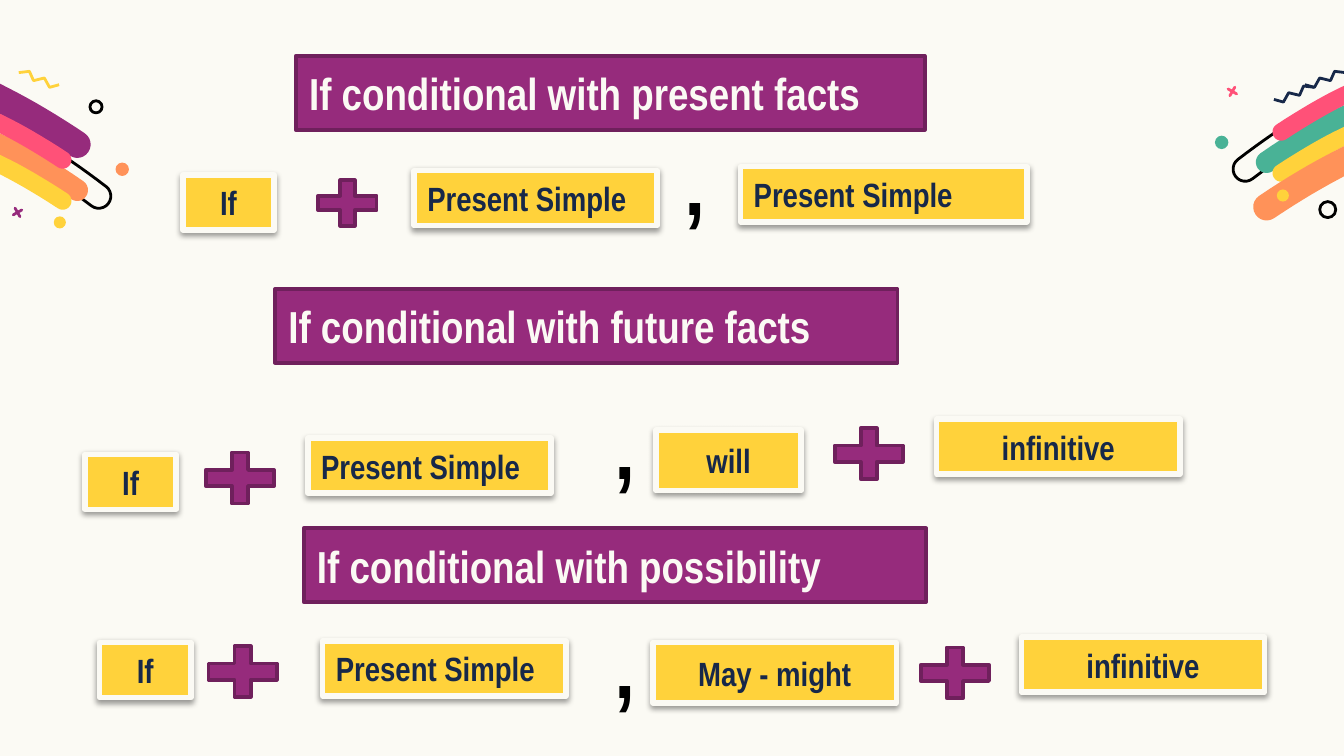
import math
from typing import NamedTuple

from lxml import etree
from pptx import Presentation
from pptx.dml.color import RGBColor
from pptx.enum import shapes, text
from pptx.oxml import ns
from pptx.util import Pt

PURPLE = RGBColor(0x96, 0x2B, 0x7C)
DARK_PURPLE = RGBColor(0x6F, 0x20, 0x5C)
YELLOW = RGBColor(0xFF, 0xD2, 0x3B)
ORANGE = RGBColor(0xFF, 0x92, 0x59)
PINK = RGBColor(0xFF, 0x51, 0x78)
GREEN = RGBColor(0x49, 0xB2, 0x96)
NAVY = RGBColor(0x17, 0x28, 0x49)
CREAM = RGBColor(0xFB, 0xFA, 0xF4)
BLACK = RGBColor(0, 0, 0)

SLIDE_W, SLIDE_H = 720, 405
LABEL_FONT = "Arial Narrow"
Point = tuple[float, float]


class Curve(NamedTuple):
    """Centre line of a round-ended band that starts at the left side."""
    start: Point
    mid: Point
    end: Point
    radius: float


class Band(NamedTuple):
    curve: Curve
    color: RGBColor | None
    drop: float = 0
    mirrored: bool = False


class Dot(NamedTuple):
    left: float
    top: float
    size: float
    color: RGBColor | None = None


class Zigzag(NamedTuple):
    dx: float
    dy: float
    color: RGBColor
    mirrored: bool


class Box(NamedTuple):
    label: str
    left: float
    top: float
    width: float
    height: float
    align: text.PP_ALIGN = text.PP_ALIGN.LEFT


class Plus(NamedTuple):
    left: float
    top: float
    width: float = 49.7
    height: float = 37


WIDE = Curve((0, 52.9), (20.9, 64.4), (41.4, 77.4), 7.2)
MEDIUM = Curve((0, 77.8), (19.4, 87.8), (41.4, 101.9), 5.8)
NARROW = Curve((0, 66.2), (15.5, 74.5), (33.6, 85.7), 4.7)
HOLLOW = Curve((16.9, 80.3), (34.6, 91.8), (52.9, 105.1), 6.5)

BANDS = [
    Band(HOLLOW, None, -14.5, True), Band(MEDIUM, GREEN, -15, True),
    Band(NARROW, YELLOW, 7, True), Band(WIDE, ORANGE, 33.5, True),
    Band(NARROW, PINK, -15, True),
    Band(HOLLOW, None), Band(MEDIUM, ORANGE), Band(NARROW, YELLOW, 22),
    Band(WIDE, PURPLE), Band(NARROW, PINK),
]
DOTS = [
    Dot(650.9, 72.7, 7.2, GREEN), Dot(684, 101.5, 6.5, YELLOW), Dot(707, 108, 8.6),
    Dot(61.9, 87.1, 7.2, ORANGE), Dot(28.8, 115.9, 6.5, YELLOW), Dot(48.2, 54, 6.5),
]
ZIGZAG_POINTS = [(31.7, 45.4), (26.6, 46.8), (23.8, 41.8),
                 (18, 43.2), (15.8, 38.2), (10.1, 38.9)]
ZIGZAGS = [Zigzag(10.8, 0, NAVY, True), Zigzag(-5.8, 7.9, NAVY, True),
           Zigzag(0, 0, YELLOW, False)]

HEADINGS = [
    Box("If conditional with present facts", 158.4, 30, 337, 39.6),
    Box("If conditional with future facts", 147.4, 154.8, 333.4, 39.6),
    Box("If conditional with possibility", 162.7, 283, 333.4, 39.6),
]
CENTER = text.PP_ALIGN.CENTER
CARDS = [
    Box("If", 97.9, 93.6, 49, 29.5, CENTER),
    Box("Present Simple", 221.8, 91.4, 130.3, 29.5),
    Box("Present Simple", 396.7, 89.3, 153.4, 29.5),
    Box("If", 45.4, 243.4, 49, 29.5, CENTER),
    Box("Present Simple", 164.9, 234.7, 130.3, 29.5),
    Box("will", 351.4, 230.4, 77.8, 32.4, CENTER),
    Box("infinitive", 501.8, 224.6, 130.3, 29.5, CENTER),
    Box("If", 53.3, 344.2, 49, 29.5, CENTER),
    Box("Present Simple", 172.8, 343.4, 130.3, 29.5),
    Box("May - might", 349.9, 344.2, 130.3, 32.4, CENTER),
    Box("infinitive", 547.2, 341.3, 130.3, 29.5, CENTER),
]
PLUSES = [Plus(164.9, 92.2, 42.5, 33.1), Plus(103.7, 237.6), Plus(440.6, 224.6),
          Plus(105.1, 341.3), Plus(486.7, 342)]
COMMAS = [(357.1, 46.1), (319.7, 187.2), (319.7, 304.6)]


def paint(shape, fill: RGBColor | None, line: RGBColor | None, weight: float = 1.5) -> None:
    shape.shadow.inherit = False
    if fill is None:
        shape.fill.background()
    else:
        shape.fill.solid()
        shape.fill.fore_color.rgb = fill
    if line is None:
        shape.line.fill.background()
    else:
        shape.line.color.rgb = line
        shape.line.width = Pt(weight)


def add_outline(slide, points: list[Point], mirrored: bool, closed: bool):
    placed = [(Pt(SLIDE_W - x if mirrored else x), Pt(y)) for x, y in points]
    builder = slide.shapes.build_freeform(*placed[0])
    builder.add_line_segments(placed[1:], close=closed)
    return builder.convert_to_shape()


def band_points(curve: Curve, drop: float, steps: int = 8) -> list[Point]:
    """Upper edge, round cap and lower edge, cut upright at the start."""
    (x0, y0), (xm, ym), (x2, y2), radius = curve
    x1, y1 = 2 * xm - (x0 + x2) / 2, 2 * ym - (y0 + y2) / 2
    angle = math.atan2(y1 - y0, x1 - x0)
    rise = radius / math.cos(angle)
    upper, lower = [(x0, y0 - rise)], [(x0, y0 + rise)]
    for step in range(1, steps):
        t = step / steps
        x = (1 - t) ** 2 * x0 + 2 * t * (1 - t) * x1 + t * t * x2
        y = (1 - t) ** 2 * y0 + 2 * t * (1 - t) * y1 + t * t * y2
        angle = math.atan2((1 - t) * (y1 - y0) + t * (y2 - y1),
                           (1 - t) * (x1 - x0) + t * (x2 - x1))
        across, along = radius * math.sin(angle), radius * math.cos(angle)
        upper.append((x + across, y - along))
        lower.append((x - across, y + along))
    angle = math.atan2(y2 - y1, x2 - x1)
    turns = [angle + math.pi * (i / 12 - 0.5) for i in range(13)]
    cap = [(x2 + radius * math.cos(a), y2 + radius * math.sin(a)) for a in turns]
    return [(x, y + drop) for x, y in upper + cap + lower[::-1]]


def add_preset(slide, kind, left: float, top: float, width: float, height: float):
    return slide.shapes.add_shape(kind, Pt(left), Pt(top), Pt(width), Pt(height))


def add_decoration(slide) -> None:
    for band in BANDS:
        stripe = add_outline(slide, band_points(band.curve, band.drop), band.mirrored, True)
        paint(stripe, band.color, None if band.color else BLACK)
    for dot in DOTS:
        circle = add_preset(slide, shapes.MSO_SHAPE.OVAL, dot.left, dot.top, dot.size, dot.size)
        paint(circle, dot.color, None if dot.color else BLACK)
    for zigzag in ZIGZAGS:
        # A mirrored zigzag counts its shift from the right side.
        dx = -zigzag.dx if zigzag.mirrored else zigzag.dx
        points = [(x + dx, y + zigzag.dy) for x, y in ZIGZAG_POINTS]
        paint(add_outline(slide, points, zigzag.mirrored, False), None, zigzag.color)
    for left, top, turn, color in [(656.6, 45.4, 30, PINK), (5.8, 110.2, -30, PURPLE)]:
        cross = add_preset(slide, shapes.MSO_SHAPE.MATH_PLUS, left, top, 7.2, 7.2)
        cross.adjustments[0] = 0
        cross.rotation = turn
        paint(cross, None, color)


def write_label(shape, box: Box, size: float, color: RGBColor) -> None:
    frame = shape.text_frame
    frame.text = box.label
    frame.word_wrap = True
    frame.auto_size = text.MSO_AUTO_SIZE.NONE
    frame.vertical_anchor = text.MSO_ANCHOR.MIDDLE
    frame.paragraphs[0].alignment = box.align
    font = frame.paragraphs[0].runs[0].font
    font.name, font.size, font.bold = LABEL_FONT, Pt(size), True
    font.color.rgb = color


def add_heading(slide, box: Box, is_title: bool) -> None:
    if is_title:
        bar = slide.shapes.title
        bar.left, bar.top, bar.width, bar.height = (Pt(length) for length in box[1:5])
        bar_properties = bar.element.spPr
        etree.SubElement(bar_properties, ns.qn("a:prstGeom"), prst="rect")
        bar.fill.solid()
        bar.fill.fore_color.rgb = PURPLE
        bar.line.color.rgb = DARK_PURPLE
        bar.line.width = Pt(2)
    else:
        bar = add_preset(slide, shapes.MSO_SHAPE.RECTANGLE, *box[1:5])
        paint(bar, PURPLE, DARK_PURPLE, 2)
    write_label(bar, box, 24, CREAM)


def add_card(slide, box: Box) -> None:
    card = add_preset(slide, shapes.MSO_SHAPE.RECTANGLE, *box[1:5])
    paint(card, YELLOW, CREAM, 3)
    effects = card.element.spPr.find(ns.qn("a:effectLst"))
    shadow = etree.SubElement(effects, ns.qn("a:outerShdw"), blurRad=str(Pt(3.1)),
                              dist=str(Pt(1.6)), dir="5400000", rotWithShape="0")
    shade = etree.SubElement(shadow, ns.qn("a:srgbClr"), val=str(BLACK))
    etree.SubElement(shade, ns.qn("a:alpha"), val="38000")
    write_label(card, box, 18, NAVY)


def add_comma(slide, left: float, top: float) -> None:
    comma = slide.shapes.add_textbox(Pt(left), Pt(top), Pt(57.6), Pt(80))
    frame = comma.text_frame
    frame.word_wrap = True
    frame.margin_top = Pt(9.6)
    frame.text = ","
    font = frame.paragraphs[0].runs[0].font
    font.name, font.size = "Arial", Pt(60)
    font.color.rgb = BLACK


def main() -> None:
    deck = Presentation()
    deck.slide_width, deck.slide_height = Pt(SLIDE_W), Pt(SLIDE_H)
    slide = deck.slides.add_slide(deck.slide_layouts[5])
    slide.background.fill.solid()
    slide.background.fill.fore_color.rgb = CREAM
    add_decoration(slide)
    for plus in PLUSES:
        paint(add_preset(slide, shapes.MSO_SHAPE.MATH_PLUS, *plus), PURPLE, DARK_PURPLE, 2)
    for left, top in COMMAS:
        add_comma(slide, left, top)
    for index, heading in enumerate(HEADINGS):
        add_heading(slide, heading, index == 0)
    for card in CARDS:
        add_card(slide, card)
    deck.save("out.pptx")


if __name__ == "__main__":
    main()
